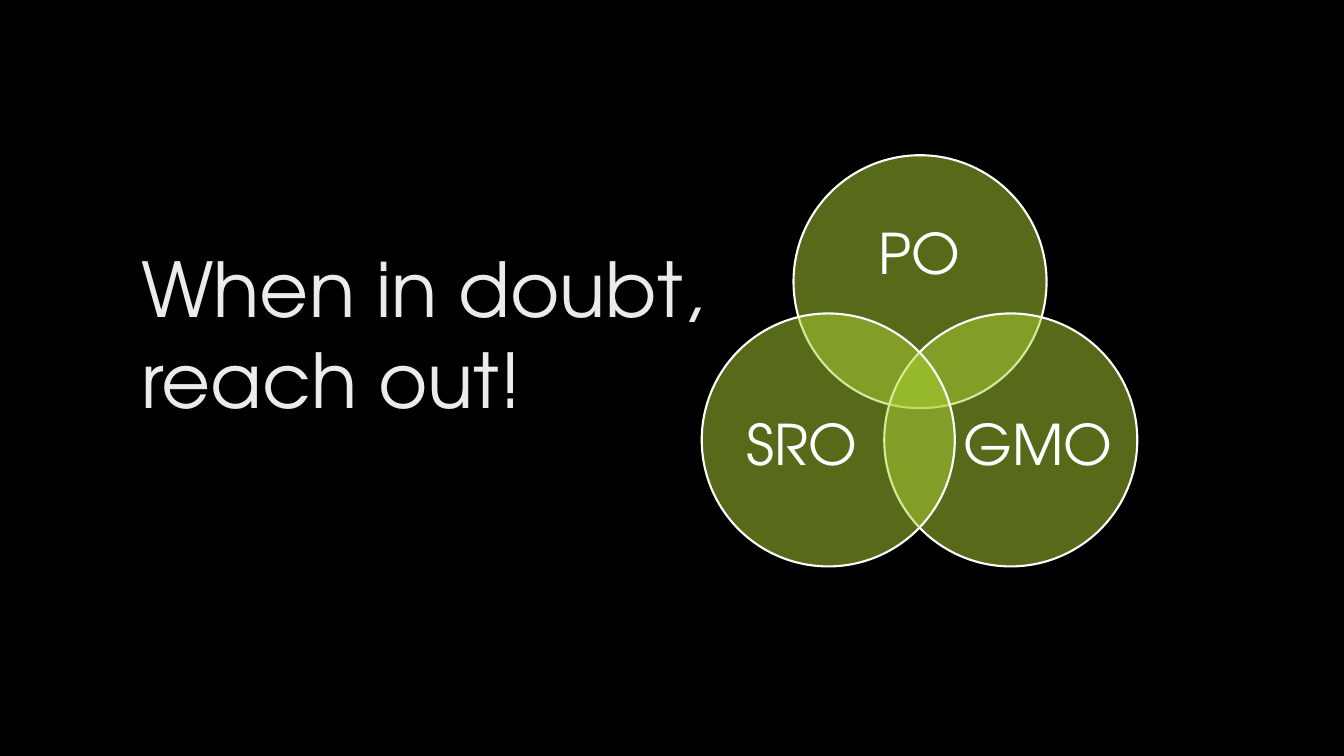
from lxml import etree
from pptx import Presentation
from pptx.dml.color import RGBColor
from pptx.enum.shapes import MSO_SHAPE
from pptx.enum.text import MSO_ANCHOR, MSO_AUTO_SIZE, PP_ALIGN
from pptx.oxml.ns import qn
from pptx.util import Inches, Pt

OVAL = MSO_SHAPE.OVAL
TOP, MIDDLE = MSO_ANCHOR.TOP, MSO_ANCHOR.MIDDLE
NO_FIT = MSO_AUTO_SIZE.NONE
LEFT, CENTER = PP_ALIGN.LEFT, PP_ALIGN.CENTER

BLACK = RGBColor(0x00, 0x00, 0x00)
WHITE = RGBColor(0xFF, 0xFF, 0xFF)
PALE = RGBColor(0xEB, 0xEB, 0xEB)
LIME = RGBColor(0xAC, 0xD4, 0x33)
FONT = "TeX Gyre Adventor"
SIZE = 2.51  # circle diameter

# Circle left and top, label, label box
CIRCLES = [
    (7.87, 1.54, "PO", (8.2, 1.98, 1.84, 1.13)),
    (8.77, 3.11, "GMO", (9.54, 3.75, 1.51, 1.38)),
    (6.96, 3.11, "SRO", (7.2, 3.75, 1.51, 1.38)),
]


def set_text(shape, text, size, color, align, anchor):
    frame = shape.text_frame
    frame.text = text
    frame.word_wrap = True
    frame.auto_size = NO_FIT
    frame.vertical_anchor = anchor
    para = frame.paragraphs[0]
    para.alignment = align
    para.font.name = FONT
    para.font.size = Pt(size)
    para.font.color.rgb = color
    return frame


def add_title(slide, text):
    title = slide.shapes.title
    title.left, title.top = Inches(1.3), Inches(2.35)
    title.width, title.height = Inches(6.41), Inches(4.01)
    set_text(title, text, 54, PALE, LEFT, TOP)


def add_circle(shapes, left, top):
    circle = shapes.add_shape(OVAL, Inches(left), Inches(top),
                              Inches(SIZE), Inches(SIZE))
    circle.shadow.inherit = False
    circle.fill.solid()
    circle.fill.fore_color.rgb = LIME
    circle.line.color.rgb = WHITE
    circle.line.width = Pt(1.5)
    # Half-transparent fill
    color = circle.fill._xPr.find(qn("a:solidFill"))[0]
    etree.SubElement(color, qn("a:alpha")).set("val", "50000")


def add_label(shapes, text, box):
    label = shapes.add_textbox(*(Inches(n) for n in box))
    frame = set_text(label, text, 40, WHITE, CENTER, MIDDLE)
    frame.margin_left = frame.margin_right = 0
    frame.margin_top = frame.margin_bottom = 0
    frame.paragraphs[0].line_spacing = 0.9


def main():
    deck = Presentation()
    deck.slide_width, deck.slide_height = Inches(13.33), Inches(7.5)
    slide = deck.slides.add_slide(deck.slide_layouts[5])
    slide.background.fill.solid()
    slide.background.fill.fore_color.rgb = BLACK

    add_title(slide, "When in doubt, reach out!")

    # Venn diagram
    venn = slide.shapes.add_group_shape()
    for left, top, text, box in CIRCLES:
        add_circle(venn.shapes, left, top)
        add_label(venn.shapes, text, box)

    deck.save("out.pptx")


if __name__ == "__main__":
    main()
